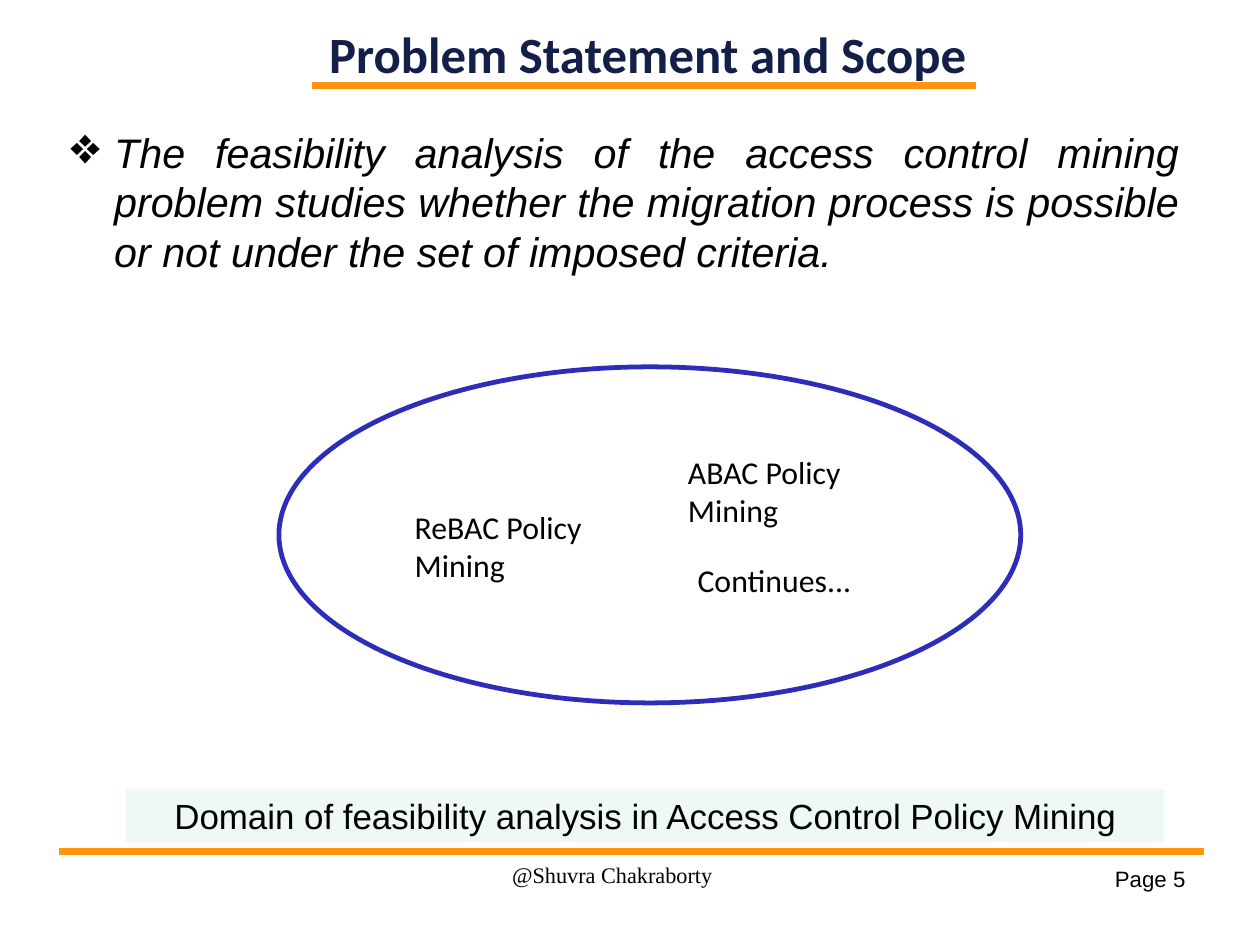
from lxml.etree import SubElement
from pptx import Presentation
from pptx.dml.color import RGBColor
from pptx.enum.shapes import MSO_CONNECTOR, MSO_SHAPE
from pptx.enum.text import MSO_ANCHOR, PP_ALIGN
from pptx.oxml.ns import qn
from pptx.util import Cm, Inches, Pt

BLACK = RGBColor(0x00, 0x00, 0x00)
WHITE = RGBColor(0xFF, 0xFF, 0xFF)
NAVY = RGBColor(0x13, 0x1F, 0x49)
ORANGE = RGBColor(0xFF, 0x95, 0x0E)
BLUE = RGBColor(0x2D, 0x2D, 0xB9)
MINT = RGBColor(0xEE, 0xF9, 0xF4)


def write(frame, text, font, size, color=BLACK, align=PP_ALIGN.LEFT,
          anchor=MSO_ANCHOR.TOP, bold=False, italic=False, inset=True):
    """Put one formatted run into the frame and return its paragraph."""
    frame.word_wrap = True
    frame.vertical_anchor = anchor
    if not inset:
        frame.margin_left = frame.margin_right = Inches(0)
        frame.margin_top = frame.margin_bottom = Inches(0)
    paragraph = frame.paragraphs[0]
    paragraph.alignment = align
    run = paragraph.add_run()
    run.text = text
    run.font.name = font
    run.font.size = Pt(size)
    run.font.bold = bold
    run.font.italic = italic
    run.font.color.rgb = color
    return paragraph


def add_title(slide, text):
    title = slide.shapes.title
    title.left, title.top = Inches(2.08), Inches(0.09)
    title.width, title.height = Inches(7.18), Inches(0.75)
    write(title.text_frame, text, "Calibri", 32, NAVY, PP_ALIGN.CENTER,
          MSO_ANCHOR.MIDDLE, bold=True, inset=False)


def add_text(slide, left, top, width, height, text, font, size, **style):
    box = slide.shapes.add_textbox(
        Inches(left), Inches(top), Inches(width), Inches(height))
    return write(box.text_frame, text, font, size, **style)


def add_bullet(paragraph, symbol):
    properties = paragraph._p.get_or_add_pPr()
    properties.set("marL", str(Inches(0.38)))
    properties.set("indent", str(Inches(-0.38)))
    SubElement(properties, qn("a:buSzPct")).set("val", "125000")
    SubElement(properties, qn("a:buChar")).set("char", symbol)


def add_rule(slide, left, right, y):
    """Draw a horizontal orange line with square ends."""
    rule = slide.shapes.add_connector(
        MSO_CONNECTOR.STRAIGHT, Inches(left), Inches(y), Inches(right), Inches(y))
    rule.line.color.rgb = ORANGE
    rule.line.width = Pt(4.31)
    properties = rule._element.spPr
    properties.find(qn("a:ln")).set("cap", "sq")
    SubElement(properties, qn("a:effectLst"))


def add_filled_shape(slide, kind, left, top, width, height, fill, outline=None):
    shape = slide.shapes.add_shape(
        kind, Inches(left), Inches(top), Inches(width), Inches(height))
    shape.shadow.inherit = False
    shape.fill.solid()
    shape.fill.fore_color.rgb = fill
    if outline is None:
        shape.line.fill.background()
    else:
        shape.line.color.rgb = outline
        shape.line.width = Pt(3)
    return shape


def main():
    deck = Presentation()
    deck.slide_width, deck.slide_height = Cm(28), Cm(21)
    slide = deck.slides.add_slide(deck.slide_layouts[5])

    add_rule(slide, 2.76, 8.51, 0.75)
    add_rule(slide, 0.55, 10.5, 7.45)
    add_title(slide, "Problem Statement and Scope")

    statement = add_text(
        slide, 0.52, 1.06, 9.91, 1.41,
        "The feasibility analysis of the access control mining problem studies "
        "whether the migration process is possible or not under the set of "
        "imposed criteria.",
        "Arial", 26, align=PP_ALIGN.JUSTIFY, italic=True)
    add_bullet(statement, "❖")

    add_filled_shape(slide, MSO_SHAPE.OVAL, 2.44, 3.21, 6.49, 2.94, WHITE, BLUE)
    add_text(slide, 5.92, 3.91, 1.82, 0.77, "ABAC Policy Mining", "Calibri", 20)
    add_text(slide, 3.53, 4.39, 1.94, 0.77, "ReBAC Policy Mining", "Calibri", 20)
    add_text(slide, 5.74, 4.86, 2.07, 0.44, "Continues...", "Calibri", 20,
             align=PP_ALIGN.CENTER)

    caption = add_filled_shape(
        slide, MSO_SHAPE.RECTANGLE, 1.1, 6.9, 9.09, 0.47, MINT)
    write(caption.text_frame,
          "Domain of feasibility analysis in Access Control Policy Mining",
          "Arial", 22, align=PP_ALIGN.CENTER)

    author = add_text(slide, 4.48, 7.53, 2.56, 0.56, "@Shuvra Chakraborty",
                      "Times New Roman", 14, inset=False)
    author.line_spacing = 1.01
    add_text(slide, 8.58, 7.52, 1.89, 0.42, "Page 5", "Arial", 14,
             align=PP_ALIGN.RIGHT)

    deck.save("out.pptx")


if __name__ == "__main__":
    main()
